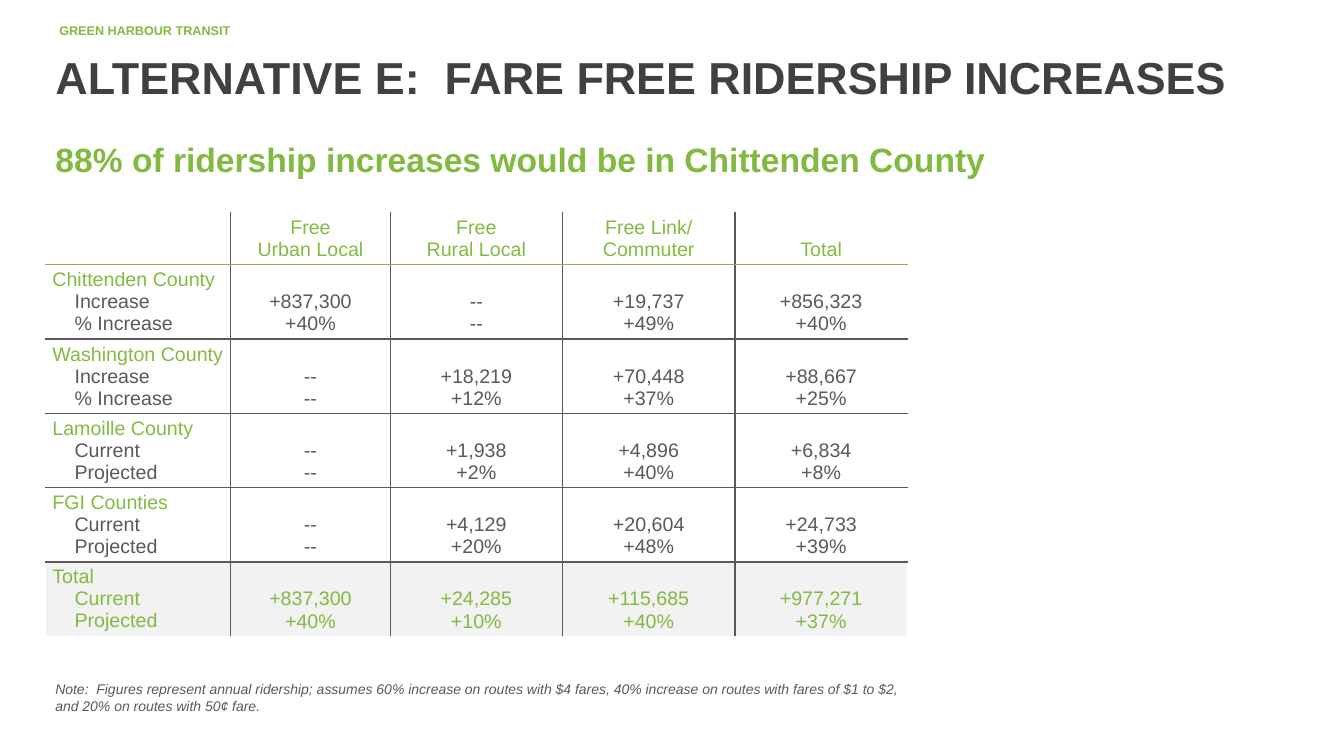
from dataclasses import dataclass

from lxml import etree
from pptx import Presentation
from pptx.dml.color import RGBColor
from pptx.enum.text import MSO_ANCHOR as Anchor, MSO_AUTO_SIZE as AutoSize, PP_ALIGN as Align
from pptx.oxml.ns import qn
from pptx.util import Inches, Pt


@dataclass(frozen=True)
class Theme:
    font: str = "Arial"
    green: str = "82B941"
    table_green: str = "83BA41"
    dark: str = "404040"
    gray: str = "595959"
    pale: str = "F2F2F2"
    white: str = "FFFFFF"
    brand_size: int = 9
    title_size: int = 32
    lead_size: int = 24
    table_size: int = 14
    note_size: int = 10


HEADERS = ["", "Free\nUrban Local", "Free\nRural Local", "Free Link/\nCommuter", "Total"]
CHANGE = ["Increase", "% Increase"]
LEVELS = ["Current", "Projected"]
NONE = ("--", "--")
# Region, line labels, then one (count, percent) pair per fare column
REGIONS = [
    ("Chittenden County", CHANGE,
     [("+837,300", "+40%"), NONE, ("+19,737", "+49%"), ("+856,323", "+40%")]),
    ("Washington County", CHANGE,
     [NONE, ("+18,219", "+12%"), ("+70,448", "+37%"), ("+88,667", "+25%")]),
    ("Lamoille County", LEVELS,
     [NONE, ("+1,938", "+2%"), ("+4,896", "+40%"), ("+6,834", "+8%")]),
    ("FGI Counties", LEVELS,
     [NONE, ("+4,129", "+20%"), ("+20,604", "+48%"), ("+24,733", "+39%")]),
    ("Total", LEVELS,
     [("+837,300", "+40%"), ("+24,285", "+10%"), ("+115,685", "+40%"), ("+977,271", "+37%")]),
]
COLUMN_WIDTHS = [1.84, 1.58, 1.71, 1.71, 1.71]
ROW_HEIGHTS = [0.49] + [0.72] * len(REGIONS)
LABEL_INDENT = 0.22
LINE_HEIGHT = 0.22


class SlideBuilder:
    def __init__(self, page, theme):
        self.page = page
        self.theme = theme

    def style(self, para, size, color, align=Align.LEFT, bold=False, italic=False):
        para.alignment = align
        for span in para.runs:
            font = span.font
            font.name, font.size = self.theme.font, Pt(size)
            font.bold, font.italic = bold, italic
            font.color.rgb = RGBColor.from_string(color)

    def fill_box(self, box, area, text, size, color, anchor=Anchor.TOP, **look):
        box.left, box.top, box.width, box.height = map(Inches, area)
        frame = box.text_frame
        frame.text = text
        frame.word_wrap = True
        frame.auto_size = AutoSize.NONE
        frame.vertical_anchor = anchor
        self.style(frame.paragraphs[0], size, color, **look)
        return frame.paragraphs[0]

    def title(self, area, text):
        self.fill_box(self.page.shapes.title, area, text, self.theme.title_size,
                      self.theme.dark, Anchor.MIDDLE, bold=True)

    def lead(self, area, text):
        para = self.fill_box(self.page.placeholders[1], area, text,
                             self.theme.lead_size, self.theme.green, bold=True)
        para.space_before = Pt(12)
        self.indent(para, 0)
        etree.SubElement(para._p.get_or_add_pPr(), qn("a:buNone"))

    def text(self, area, text, size, color, **look):
        box = self.page.shapes.add_textbox(*map(Inches, area))
        self.fill_box(box, area, text, size, color, **look)

    def indent(self, para, inches):
        properties = para._p.get_or_add_pPr()
        properties.set("marL", str(Inches(inches)))
        properties.set("indent", "0")

    def borders(self, cell, colors):
        properties = cell._tc.get_or_add_tcPr()
        for side, color in zip("LRTB", colors):
            line = etree.SubElement(properties, qn(f"a:ln{side}"), w=str(Pt(1)))
            solid = etree.SubElement(line, qn("a:solidFill"))
            etree.SubElement(solid, qn("a:srgbClr"), val=color)

    def cell(self, cell, lines, colors, align, anchor, top_gap=0, indent=0):
        cell.margin_left = cell.margin_right = Inches(0.07)
        cell.margin_top, cell.margin_bottom = Inches(0.04 + top_gap), Inches(0.04)
        cell.vertical_anchor = anchor
        frame = cell.text_frame
        for index, (line, color) in enumerate(zip(lines, colors)):
            para = frame.add_paragraph() if index else frame.paragraphs[0]
            para.text = line
            self.style(para, self.theme.table_size, color, align)
            if index and indent:
                self.indent(para, indent)

    def ridership_table(self, left, top):
        theme = self.theme
        table = self.page.shapes.add_table(
            len(ROW_HEIGHTS), len(COLUMN_WIDTHS), Inches(left), Inches(top),
            Inches(sum(COLUMN_WIDTHS)), Inches(sum(ROW_HEIGHTS))).table
        table.first_row = table.horz_banding = False
        for column, width in zip(table.columns, COLUMN_WIDTHS):
            column.width = Inches(width)
        for row, height in zip(table.rows, ROW_HEIGHTS):
            row.height = Inches(height)

        # Header row
        for column, header in enumerate(HEADERS):
            self.cell(table.cell(0, column), [header], [theme.table_green],
                      Align.CENTER, Anchor.BOTTOM)

        # One row per region
        last_row, last_column = len(REGIONS), len(HEADERS) - 1
        for row, (region, labels, pairs) in enumerate(REGIONS, 1):
            is_total = row == last_row
            heading = theme.green if is_total else theme.table_green
            value = theme.green if is_total else theme.gray
            self.cell(table.cell(row, 0), [region, *labels], [heading, value, value],
                      Align.LEFT, Anchor.MIDDLE, indent=LABEL_INDENT)
            for column, pair in enumerate(pairs, 1):
                self.cell(table.cell(row, column), pair, [value, value],
                          Align.CENTER, Anchor.MIDDLE, top_gap=LINE_HEIGHT)

        # Rules between cells: white outside, green under the header
        across = [theme.white, theme.table_green] + [theme.gray] * (last_row - 1) + [theme.white]
        down = [theme.white] + [theme.gray] * last_column + [theme.white]
        for row in range(last_row + 1):
            for column in range(last_column + 1):
                cell = table.cell(row, column)
                self.borders(cell, down[column:column + 2] + across[row:row + 2])
                if row == last_row:
                    cell.fill.solid()
                    cell.fill.fore_color.rgb = RGBColor.from_string(theme.pale)
                else:
                    cell.fill.background()


def main():
    deck = Presentation()
    deck.slide_width, deck.slide_height = Inches(13.33), Inches(7.5)
    theme = Theme()
    builder = SlideBuilder(deck.slides.add_slide(deck.slide_layouts[1]), theme)

    # Headings
    builder.text((0.49, 0.18, 9.46, 0.25), "GREEN HARBOUR TRANSIT",
                 theme.brand_size, theme.green, bold=True)
    builder.title((0.45, 0.36, 12.21, 0.8), "ALTERNATIVE E:  FARE FREE RIDERSHIP INCREASES")
    builder.lead((0.45, 1.33, 12.21, 0.6),
                 "88% of ridership increases would be in Chittenden County")

    # Table and note
    builder.ridership_table(0.45, 2.11)
    builder.text((0.45, 6.7, 8.78, 0.44),
                 "Note:  Figures represent annual ridership; assumes 60% increase on routes "
                 "with $4 fares, 40% increase on routes with fares of $1 to $2, "
                 "and 20% on routes with 50¢ fare.",
                 theme.note_size, theme.gray, italic=True)
    deck.save("out.pptx")


if __name__ == "__main__":
    main()
